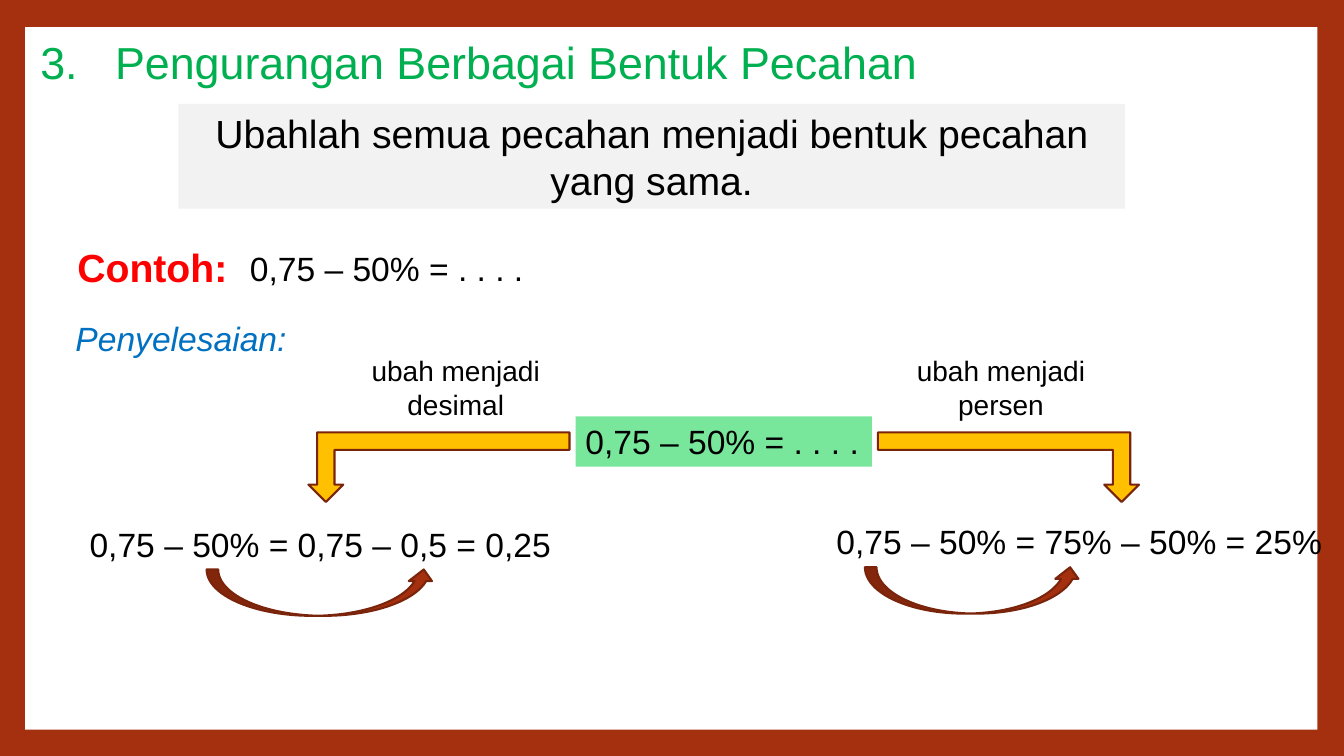
from dataclasses import dataclass

from pptx import Presentation
from pptx.dml.color import RGBColor
from pptx.enum.shapes import MSO_SHAPE
from pptx.enum.text import MSO_ANCHOR, MSO_AUTO_SIZE, PP_ALIGN
from pptx.util import Pt

RECTANGLE = MSO_SHAPE.RECTANGLE
BENT_ARROW = MSO_SHAPE.BENT_UP_ARROW
CURVED_ARROW = MSO_SHAPE.CURVED_UP_ARROW
LEFT, CENTER = PP_ALIGN.LEFT, PP_ALIGN.CENTER
TOP = MSO_ANCHOR.TOP
FIT_SHAPE = MSO_AUTO_SIZE.SHAPE_TO_FIT_TEXT
TITLE_ONLY = 5


@dataclass(frozen=True)
class Theme:
    font: str = "Arial"
    frame: str = "A5300F"
    paper: str = "FFFFFF"
    ink: str = "000000"
    title: str = "00B050"
    rule: str = "F2F2F2"
    example: str = "FF0000"
    solution: str = "0070C0"
    problem: str = "79E79B"
    arrow: str = "FFC000"
    outline: str = "7A240B"
    title_size: int = 32
    heading_size: int = 28
    text_size: int = 24
    label_size: int = 20


def fill_text(frame, text, *, size, color, font, align=LEFT, bold=False,
              italic=False, wrap=True):
    frame.word_wrap = wrap
    frame.auto_size = FIT_SHAPE
    frame.vertical_anchor = TOP
    paragraph = frame.paragraphs[0]
    paragraph.alignment = align
    run = paragraph.add_run()
    run.text = text
    run.font.name = font
    run.font.size = Pt(size)
    run.font.bold = bold
    run.font.italic = italic
    run.font.color.rgb = RGBColor.from_string(color)
    return paragraph


class LessonSlide:
    def __init__(self, presentation, theme):
        self.theme = theme
        self.slide = presentation.slides.add_slide(
            presentation.slide_layouts[TITLE_ONLY])
        background = self.slide.background.fill
        background.solid()
        background.fore_color.rgb = RGBColor.from_string(theme.frame)

    def styled(self, frame, text, **style):
        defaults = {"size": self.theme.text_size, "color": self.theme.ink,
                    "font": self.theme.font}
        return fill_text(frame, text, **(defaults | style))

    def shape(self, kind, box, fill, outline=None):
        shape = self.slide.shapes.add_shape(kind, *map(Pt, box))
        shape.shadow.inherit = False
        shape.fill.solid()
        shape.fill.fore_color.rgb = RGBColor.from_string(fill)
        if outline:
            shape.line.color.rgb = RGBColor.from_string(outline)
            shape.line.width = Pt(1.5)
        else:
            shape.line.fill.background()
        return shape

    def panel(self, box):
        panel = self.shape(RECTANGLE, box, self.theme.paper)
        self.slide.shapes.title.element.addprevious(panel.element)

    def title(self, text, box, hanging):
        title = self.slide.shapes.title
        title.left, title.top, title.width, title.height = map(Pt, box)
        heading = self.styled(title.text_frame, text,
                              size=self.theme.title_size,
                              color=self.theme.title)
        properties = heading._p.get_or_add_pPr()
        properties.set("marL", str(Pt(hanging)))
        properties.set("indent", str(-Pt(hanging)))

    def text(self, text, box, **style):
        textbox = self.slide.shapes.add_textbox(*map(Pt, box))
        self.styled(textbox.text_frame, text, **style)

    def filled_text(self, text, box, fill, **style):
        self.styled(self.shape(RECTANGLE, box, fill).text_frame, text, **style)

    def bent_arrow(self, box, to_left):
        arrow = self.shape(BENT_ARROW, box, self.theme.arrow, self.theme.outline)
        transform = arrow.element.spPr.xfrm
        transform.set("flipV", "1")
        if to_left:
            transform.set("flipH", "1")

    def curved_arrow(self, box):
        self.shape(CURVED_ARROW, box, self.theme.frame, self.theme.outline)


def main():
    presentation = Presentation()
    presentation.slide_width, presentation.slide_height = Pt(960), Pt(540)
    theme = Theme()
    lesson = LessonSlide(presentation, theme)
    problem = "0,75 – 50% = . . . ."

    lesson.panel((18, 19.4, 923, 501.8))
    lesson.title("3.\tPengurangan Berbagai Bentuk Pecahan",
                 (21.6, 20.9, 710.6, 46.1), hanging=53.4)
    lesson.filled_text("Ubahlah semua pecahan menjadi bentuk pecahan yang sama.",
                       (127.4, 74.2, 676.1, 74.9), theme.rule,
                       size=theme.heading_size, align=CENTER)
    lesson.text("Contoh:", (48.2, 170.6, 123.1, 41), size=theme.heading_size,
                color=theme.example, bold=True, wrap=False)
    lesson.text(problem, (171.4, 173.5, 211.7, 36), wrap=False)
    lesson.text("Penyelesaian:", (46.8, 223.2, 167, 36),
                color=theme.solution, italic=True, wrap=False)
    lesson.filled_text(problem, (411.1, 297.4, 211.7, 36), theme.problem,
                       wrap=False)

    methods = (
        ("desimal", 220.3, True, 247, "0,75 – 50% = 0,75 – 0,5 = 0,25",
         (56.9, 370.8, 347, 36), (147.6, 406.8, 163.4, 33.1)),
        ("persen", 627.1, False, 636.5, "0,75 – 50% = 75% – 50% = 25%",
         (590.4, 368.9, 365, 36), (617.8, 405.2, 154.8, 33.1)),
    )
    for form, arrow_x, to_left, label_x, result, result_box, curve_box in methods:
        lesson.bent_arrow((arrow_x, 308.9, 186.5, 49.7), to_left)
        lesson.text(f"ubah menjadi {form}", (label_x, 249.1, 157, 55.4),
                    size=theme.label_size, align=CENTER)
        lesson.text(result, result_box, wrap=False)
        lesson.curved_arrow(curve_box)

    presentation.save("out.pptx")


if __name__ == "__main__":
    main()
